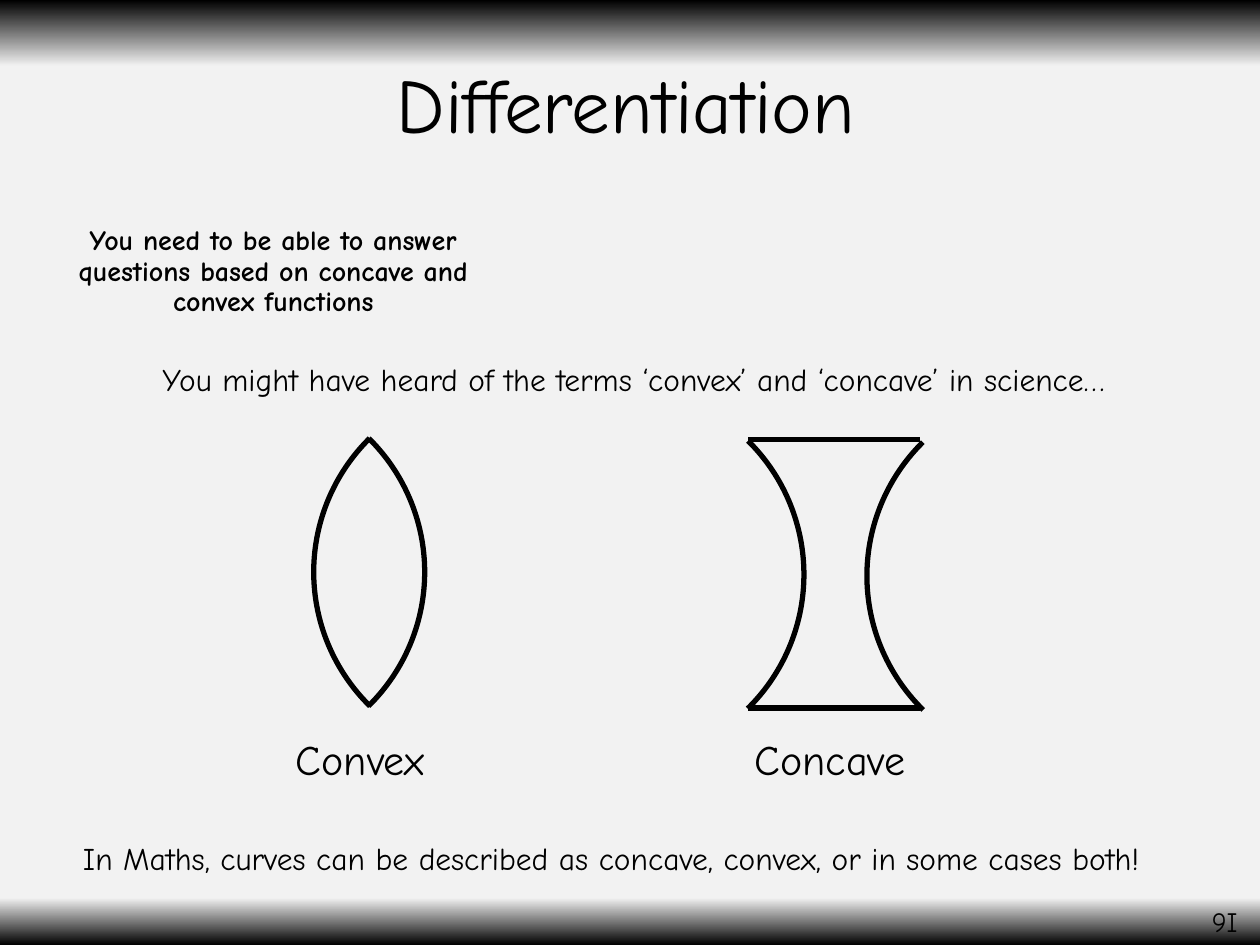
from lxml import etree
from pptx import Presentation
from pptx.dml.color import RGBColor
from pptx.enum import shapes, text
from pptx.oxml import parse_xml
from pptx.oxml.ns import nsdecls, qn
from pptx.util import Pt

# Content: boxes are left, top, width, height in points
FONT, INK, PAPER = "Comic Neue", "000000", "F2F2F2"
BACKGROUND_STOPS = [(0, INK), (7, PAPER), (95, PAPER), (100, INK)]

TITLE = ("Differentiation", (47.5, 10, 620.6, 104.4), {"size": Pt(44)})
BODY = ("You need to be able to answer questions based on concave and convex functions",
        (12.2, 126, 288, 375.8), {"size": Pt(16), "bold": True})

LABELS = [  # text, box, size, wrap
    ("9I", (685.4, 513.4, 40.3, 26.6), 16, True),
    ("You might have heard of the terms ‘convex’ and ‘concave’ in science…",
     (85.7, 202.3, 594, 29.1), 18, False),
    ("Convex", (162, 415.4, 93.6, 36.3), 24, False),
    ("Concave", (424.1, 415.4, 104.4, 36.3), 24, False),
    ("In Maths, curves can be described as concave, convex, or in some cases both!",
     (40.3, 475.9, 663.8, 29.1), 18, False),
]

ARC_SIZE, ARC_TILT, LINE_WIDTH = 214.6, 44.6, 3
LENSES = [  # arcs (left, top, bulges left), edges (x1, x2, y)
    {"arcs": [(28.1, 219.6, False), (179.3, 219.6, True)], "edges": []},
    {"arcs": [(244.8, 221, False), (495.4, 221.8, True)],
     "edges": [(427.7, 525.6, 251.3), (427.7, 525.6, 404.6)]},
]


def color(hex_string):
    return RGBColor.from_string(hex_string)


def write(shape, words, formats, **paragraph_formats):
    paragraph = shape.text_frame.paragraphs[0]
    for name, value in paragraph_formats.items():
        setattr(paragraph, name, value)
    run = paragraph.add_run()
    run.text = words
    for name, value in {"name": FONT, **formats}.items():
        setattr(run.font, name, value)
    run.font.color.rgb = color(INK)
    return paragraph


def place(shape, box):
    for name, value in zip(("left", "top", "width", "height"), box):
        setattr(shape, name, Pt(value))


def ink_line(shape):
    shape.line.color.rgb = color(INK)
    shape.line.width = Pt(LINE_WIDTH)


def add_arc(group, left, top, bulges_left):
    arc = group.shapes.add_shape(shapes.MSO_SHAPE.ARC, Pt(left), Pt(top),
                                 Pt(ARC_SIZE), Pt(ARC_SIZE))
    arc.adjustments[0], arc.adjustments[1] = 162, 0.57
    arc.rotation = 360 - ARC_TILT if bulges_left else ARC_TILT
    if bulges_left:
        arc._element.spPr.find(qn("a:xfrm")).set("flipH", "1")
    arc.fill.background()
    ink_line(arc)
    arc.shadow.inherit = False


def add_edge(group, x1, x2, y):
    edge = group.shapes.add_connector(shapes.MSO_CONNECTOR.STRAIGHT,
                                      Pt(x1), Pt(y), Pt(x2), Pt(y))
    ink_line(edge)
    etree.SubElement(edge._element.spPr, qn("a:effectLst"))


def set_background(slide):
    stops = "".join(f'<a:gs pos="{position * 1000}"><a:srgbClr val="{shade}"/></a:gs>'
                    for position, shade in BACKGROUND_STOPS)
    slide._element.cSld.insert(0, parse_xml(
        f'<p:bg {nsdecls("p", "a")}><p:bgPr><a:gradFill rotWithShape="1">'
        f'<a:gsLst>{stops}</a:gsLst><a:lin ang="5400000" scaled="0"/></a:gradFill>'
        f'<a:effectLst/></p:bgPr></p:bg>'))


def main():
    presentation = Presentation()
    presentation.slide_width, presentation.slide_height = Pt(720), Pt(540)
    slide = presentation.slides.add_slide(presentation.slide_layouts[1])
    set_background(slide)

    # Title and body
    centered = {"alignment": text.PP_ALIGN.CENTER, "line_spacing": 0.9}
    words, box, formats = TITLE
    place(slide.shapes.title, box)
    slide.shapes.title.text_frame.vertical_anchor = text.MSO_ANCHOR.MIDDLE
    write(slide.shapes.title, words, formats, **centered)

    words, box, formats = BODY
    body = slide.placeholders[1]
    place(body, box)
    paragraph = write(body, words, formats, space_before=Pt(10), **centered)
    properties = paragraph._p.get_or_add_pPr()
    properties.set("marL", "0")
    properties.set("indent", "0")
    etree.SubElement(properties, qn("a:buNone"))

    # Lens outlines
    for lens in LENSES:
        group = slide.shapes.add_group_shape()
        for arc in lens["arcs"]:
            add_arc(group, *arc)
        for edge in lens["edges"]:
            add_edge(group, *edge)

    # Labels
    for words, box, size, wrap in LABELS:
        label = slide.shapes.add_textbox(*map(Pt, box))
        label.text_frame.word_wrap = wrap
        label.text_frame.auto_size = text.MSO_AUTO_SIZE.SHAPE_TO_FIT_TEXT
        write(label, words, {"size": Pt(size)})

    presentation.save("out.pptx")


if __name__ == "__main__":
    main()
